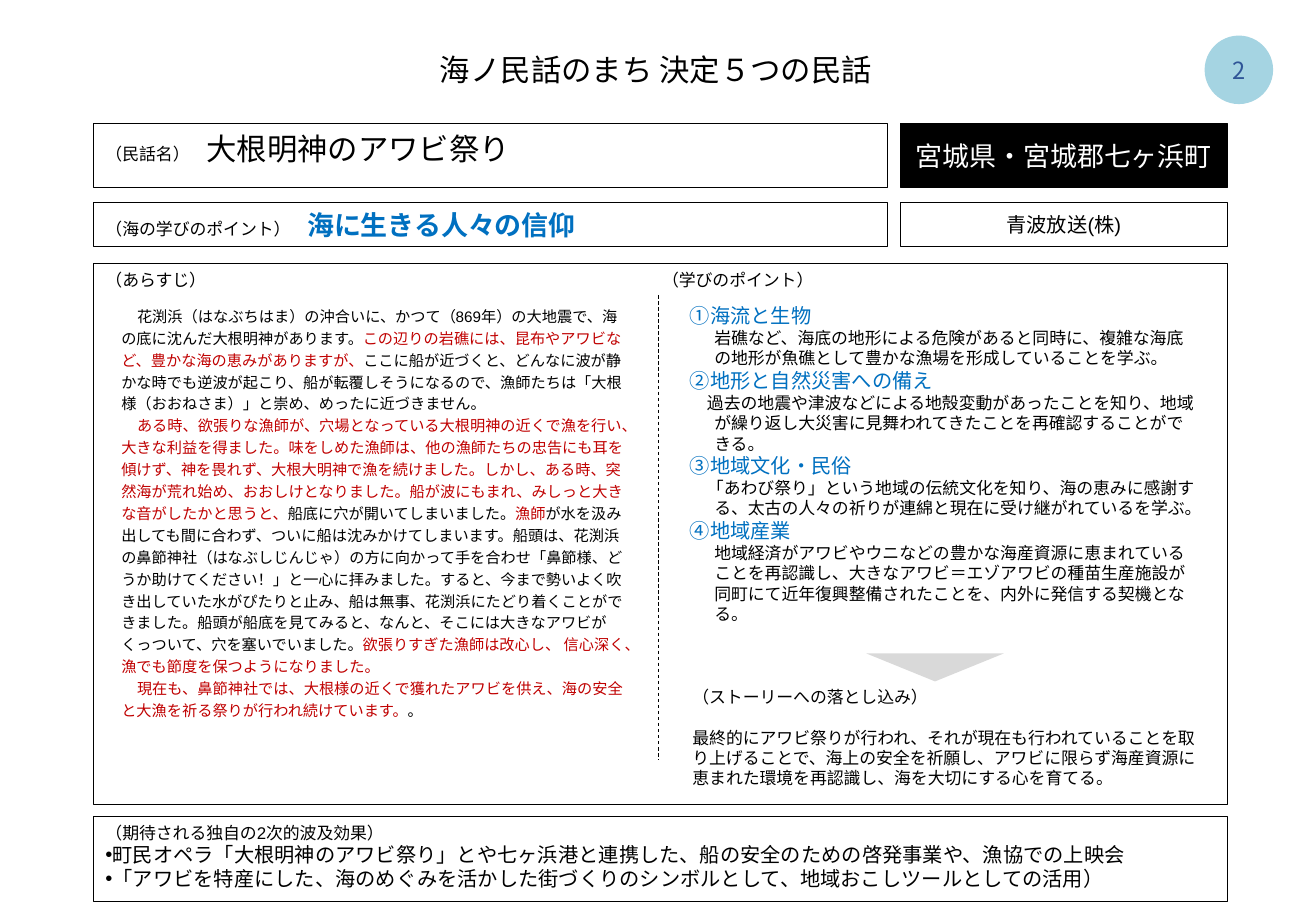
"""Build the slide for one of the five sea folk tales."""
from dataclasses import dataclass

from lxml.etree import SubElement
from pptx import Presentation
from pptx.dml.color import RGBColor as Rgb
from pptx.enum.dml import MSO_LINE_DASH_STYLE as Dash
from pptx.enum.shapes import MSO_CONNECTOR as Link, MSO_SHAPE as Form
from pptx.enum.text import MSO_ANCHOR as Anchor, PP_ALIGN as Align
from pptx.oxml.ns import qn
from pptx.util import Inches, Pt

INK = {"black": "000000", "white": "FFFFFF", "blue": "0070C0", "red": "C00000",
       "sky": "A5D4E2", "navy": "2F5597", "grey": "D9D9D9"}
LEFT, SIDE = 0.77, 7.41
WIDE, FULL, SLIM = 6.53, 9.33, 2.69


@dataclass
class Run:
    """A stretch of text in one style."""
    text: str
    size: float = 10
    ink: str = "black"
    bold: bool = False
    font: str = "Arial"


@dataclass
class Para:
    """A paragraph with its layout."""
    runs: list[Run]
    left: float = 0
    first: float = 0
    lines: float = 1
    gap: float = 0
    mark: str = ""


@dataclass
class Box:
    """A block of text, with an optional outline."""
    x: float
    y: float
    w: float
    h: float
    paras: list[Para]
    form: Form | None = None
    fill: str = ""
    line: str = "black"
    weight: float = 0.5
    mid: bool = False
    inset: float = 0.1


def paint(fill, ink: str) -> None:
    """Fill with a named colour."""
    fill.solid()
    fill.fore_color.rgb = Rgb.from_string(INK[ink])


def write(frame, paras: list[Para], mid: bool = False) -> None:
    """Set the paragraphs of a text frame."""
    frame.vertical_anchor = Anchor.MIDDLE if mid else Anchor.TOP
    for i, para in enumerate(paras):
        p = frame.add_paragraph() if i else frame.paragraphs[0]
        p.alignment = Align.CENTER if mid else Align.LEFT
        p.line_spacing = para.lines
        p.space_before = Pt(para.gap)
        props = p._p.get_or_add_pPr()
        props.set("marL", str(Inches(para.left)))
        props.set("indent", str(Inches(para.first)))
        if para.mark:
            SubElement(props, qn("a:buFont")).set("typeface", "Arial")
            SubElement(props, qn("a:buChar")).set("char", para.mark)
        for item in para.runs:
            run = p.add_run()
            run.text = item.text
            run.font.size = Pt(item.size)
            run.font.bold = item.bold
            run.font.name = item.font
            run.font.color.rgb = Rgb.from_string(INK[item.ink])


def draw(slide, box: Box) -> None:
    """Draw one box with its text."""
    place = [Inches(v) for v in (box.x, box.y, box.w, box.h)]
    if box.form is None:
        shape = slide.shapes.add_textbox(*place)
    else:
        shape = slide.shapes.add_shape(box.form, *place)
        shape.shadow.inherit = False
        if box.fill:
            paint(shape.fill, box.fill)
        else:
            shape.fill.background()
        paint(shape.line.fill, box.line)
        shape.line.width = Pt(box.weight)
    frame = shape.text_frame
    frame.word_wrap = True
    frame.margin_left = frame.margin_right = Inches(box.inset)
    write(frame, box.paras, box.mid)


def panel(x: float, y: float, w: float, h: float, paras: list[Para], **more) -> Box:
    """Return an outlined rectangle."""
    return Box(x, y, w, h, paras, Form.RECTANGLE, **more)


def label(text: str, size: float = 10, ink: str = "black") -> Para:
    """Return a paragraph of one run."""
    return Para([Run(text, size, ink)])


def tale(*parts: tuple[str, str]) -> Para:
    """Return a story paragraph from ink and text pairs."""
    return Para([Run(text, 9, ink) for ink, text in parts], first=0.13, lines=1.2)


STORY = [
    tale(("black", "花渕浜（はなぶちはま）の沖合いに、かつて（869年）の大地震で、海の底に沈んだ大根明神があります。"),
         ("red", "この辺りの岩礁には、昆布やアワビなど、豊かな海の恵みがありますが、"),
         ("black", "ここに船が近づくと、どんなに波が静かな時でも逆波が起こり、船が転覆しそうになるので、"
                   "漁師たちは「大根様（おおねさま）」と崇め、めったに近づきません。")),
    tale(("red", "ある時、欲張りな漁師が、穴場となっている大根明神の近くで漁を行い、大きな利益を得ました。"
                 "味をしめた漁師は、他の漁師たちの忠告にも耳を傾けず、神を畏れず、大根大明神で漁を続けました。"
                 "しかし、ある時、突然海が荒れ始め、おおしけとなりました。"
                 "船が波にもまれ、みしっと大きな音がしたかと思うと、"),
         ("black", "船底に穴が開いてしまいました。"),
         ("red", "漁師"),
         ("black", "が水を汲み出しても間に合わず、ついに船は沈みかけてしまいます。"
                   "船頭は、花渕浜の鼻節神社（はなぶしじんじゃ）の方に向かって手を合わせ"
                   "「鼻節様、どうか助けてください！」と一心に拝みました。"
                   "すると、今まで勢いよく吹き出していた水がぴたりと止み、船は無事、花渕浜にたどり着くことができました。"
                   "船頭が船底を見てみると、なんと、そこには大きなアワビがくっついて、穴を塞いでいました。"),
         ("red", "欲張りすぎた漁師は改心し、 信心深く、漁でも節度を保つようになりました。")),
    tale(("red", "現在も、鼻節神社では、大根様の近くで獲れたアワビを供え、"
                 "海の安全と大漁を祈る祭りが行われ続けています。"), ("black", "。")),
]
POINTS = [
    ("①海流と生物", 0,
     "岩礁など、海底の地形による危険があると同時に、複雑な海底の地形が魚礁として豊かな漁場を形成していることを学ぶ。"),
    ("②地形と自然災害への備え", -0.06,
     "過去の地震や津波などによる地殻変動があったことを知り、地域が繰り返し大災害に見舞われてきたことを再確認することができる。"),
    ("③地域文化・民俗", -0.06,
     "「あわび祭り」という地域の伝統文化を知り、海の恵みに感謝する、太古の人々の祈りが連綿と現在に受け継がれているを学ぶ。"),
    ("④地域産業", 0,
     "地域経済がアワビやウニなどの豊かな海産資源に恵まれていることを再認識し、大きなアワビ＝エゾアワビの種苗生産施設が"
     "同町にて近年復興整備されたことを、内外に発信する契機となる。"),
]
LESSON = [para for head, first, body in POINTS for para in (
    Para([Run(head, 12, "blue")], left=0.2, first=-0.2),
    Para([Run(body)], left=0.2, first=first))]
MORAL = [
    label("（ストーリーへの落とし込み）"),
    Para([Run("最終的にアワビ祭りが行われ、それが現在も行われていることを取り上げることで、海上の安全を祈願し、"
              "アワビに限らず海産資源に恵まれた環境を再認識し、海を大切にする心を育てる。")], gap=12.5),
]
EFFECTS = [label("（期待される独自の2次的波及効果）")] + [
    Para([Run(text, 12)], left=0.06, first=-0.06, mark="•") for text in (
        "町民オペラ「大根明神のアワビ祭り」とや七ヶ浜港と連携した、船の安全のための啓発事業や、漁協での上映会",
        "「アワビを特産にした、海のめぐみを活かした街づくりのシンボルとして、地域おこしツールとしての活用）")]
BOXES = [
    Box(9.92, 0.3, 0.55, 0.55, [Para([Run("2", 14, "navy", font="Noto Sans CJK JP")])],
        Form.OVAL, "sky", "sky", 1, True, 0),
    panel(SIDE, 1.02, SLIM, 0.52, [label("宮城県・宮城郡七ヶ浜町", 16, "white")],
          fill="black", mid=True),
    panel(LEFT, 1.02, WIDE, 0.52,
          [Para([Run("（民話名）　"), Run("大根明神のアワビ祭り", 18)])]),
    panel(SIDE, 1.67, SLIM, 0.36, [label("青波放送(株)", 12)], mid=True),
    panel(LEFT, 1.67, WIDE, 0.36,
          [Para([Run("（海の学びのポイント）　"), Run("海に生きる人々の信仰", 16, "blue", True)])]),
    panel(LEFT, 2.17, FULL, 4.45, [label("（あらすじ）")]),
    Box(5.35, 2.17, 2, 0.27, [label("（学びのポイント）")]),
    Box(0.9, 2.45, 4.34, 3.54, STORY),
    Box(5.58, 2.45, 4.36, 2.93, LESSON),
    Box(5.6, 5.6, 4.34, 0.94, MORAL),
    panel(LEFT, 6.72, FULL, 0.7, EFFECTS),
]


def main() -> None:
    """Build and save the slide."""
    deck = Presentation()
    deck.slide_width, deck.slide_height = Inches(10.83), Inches(7.5)
    slide = deck.slides.add_slide(deck.slide_layouts[5])
    title = slide.shapes.title
    title.left, title.top = Inches(3.52), Inches(0.37)
    title.width, title.height = Inches(3.79), Inches(0.4)
    title.text_frame.word_wrap = False
    write(title.text_frame, [Para([Run("海ノ民話のまち 決定５つの民話", 18, font="Calibri")])])
    for box in BOXES:
        draw(slide, box)
    rule = slide.shapes.add_connector(
        Link.STRAIGHT, Inches(5.42), Inches(2.43), Inches(5.42), Inches(6.26))
    paint(rule.line.fill, "black")
    rule.line.width = Pt(0.5)
    rule.line.dash_style = Dash.DASH
    SubElement(rule._element.spPr, qn("a:effectLst"))
    arrow = slide.shapes.add_shape(
        Form.ISOSCELES_TRIANGLE, Inches(7.13), Inches(5.38), Inches(1.13), Inches(0.23))
    arrow.rotation = 180
    arrow.shadow.inherit = False
    paint(arrow.fill, "grey")
    arrow.line.fill.background()
    deck.save("out.pptx")


if __name__ == "__main__":
    main()
